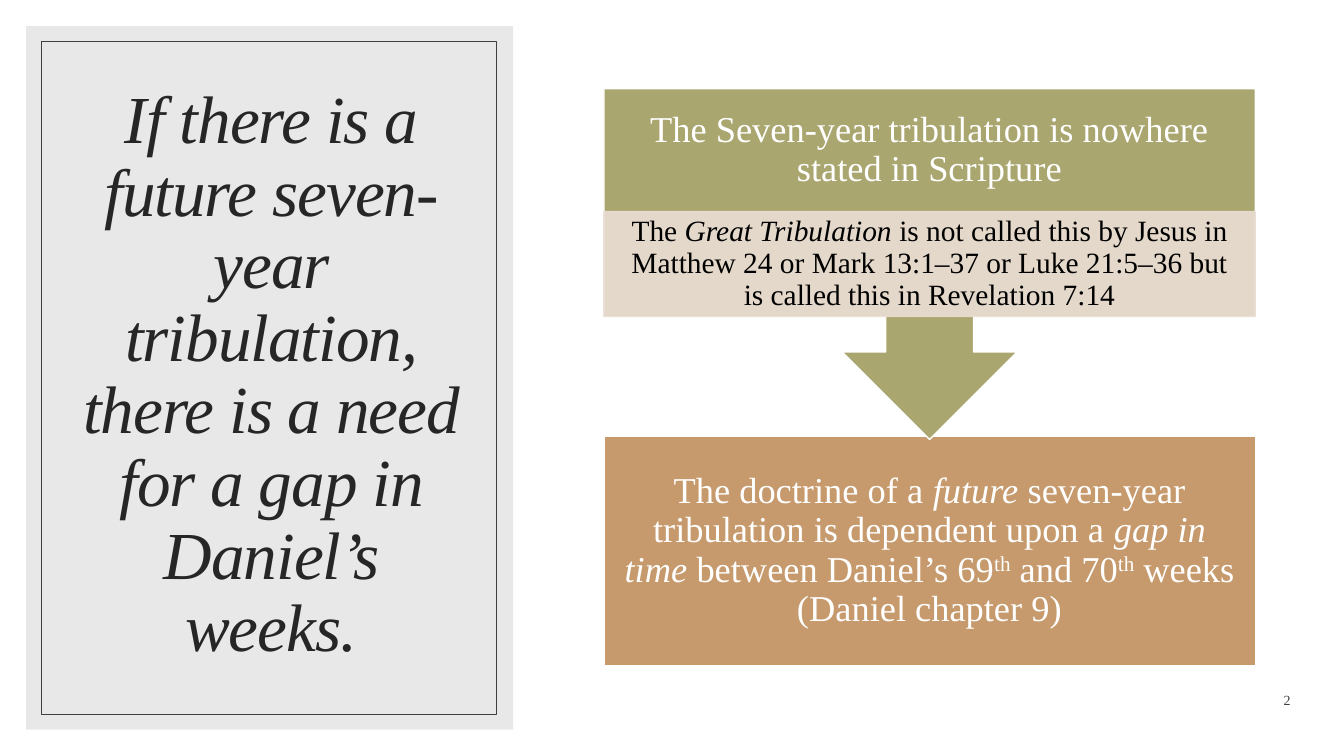
"""Build the slide on the seven-year tribulation and the gap in Daniel's weeks."""
from dataclasses import dataclass
from typing import Optional

from lxml.etree import SubElement
from pptx import Presentation
from pptx.dml.color import RGBColor
from pptx.enum.shapes import MSO_SHAPE as Kind
from pptx.enum.text import MSO_ANCHOR as Anchor, PP_ALIGN as Align
from pptx.oxml.ns import qn
from pptx.util import Inches, Pt

FONT = "Times New Roman"
WHITE, OLIVE, SAND, TAN = "FFFFFF", "AAA670", "EADED4", "C69A6C"
LEFT, WIDE = 5.99, 6.46


@dataclass
class Bit:
    text: str
    slant: bool = False
    lift: bool = False


@dataclass
class Words:
    bits: list[Bit]
    size: float
    color: str
    pad: tuple[float, float] = (0.1, 0.05)
    anchor: Anchor = Anchor.MIDDLE
    align: Align = Align.CENTER
    lead: float = 0.9
    after: float = 0
    track: int = 0


@dataclass
class Item:
    at: tuple[float, float, float, float]
    kind: Optional[Kind] = Kind.RECTANGLE
    fill: Optional[str] = None
    line: Optional[str] = None
    weight: float = 1
    alpha: int = 100
    turn: float = 0
    words: Optional[Words] = None


def tint(code: str) -> RGBColor:
    return RGBColor.from_string(code)


def write(shape, words: Words) -> None:
    frame = shape.text_frame
    frame.word_wrap = True
    frame.vertical_anchor = words.anchor
    side, edge = map(Inches, words.pad)
    frame.margin_left = frame.margin_right = side
    frame.margin_top = frame.margin_bottom = edge
    para = frame.paragraphs[0]
    para.alignment = words.align
    para.line_spacing = words.lead
    para.space_after = Pt(words.after)
    for bit in words.bits:
        run = para.add_run()
        run.text = bit.text
        font = run.font
        font.name, font.size, font.italic = FONT, Pt(words.size), bit.slant
        font.color.rgb = tint(words.color)
        props = run._r.get_or_add_rPr()
        if bit.lift:
            props.set("baseline", "30000")
        if words.track:
            props.set("spc", str(words.track))


def draw(slide, item: Item) -> None:
    box = [Inches(n) for n in item.at]
    if item.kind is None:
        shape = slide.shapes.add_textbox(*box)
    else:
        shape = slide.shapes.add_shape(item.kind, *box)
        shape.shadow.inherit = False
        shape.rotation = item.turn
        if item.fill:
            shape.fill.solid()
            shape.fill.fore_color.rgb = tint(item.fill)
        else:
            shape.fill.background()
        if item.line:
            shape.line.color.rgb = tint(item.line)
            shape.line.width = Pt(item.weight)
        else:
            shape.line.fill.background()
        if item.alpha < 100:
            for node in list(shape.element.spPr.iter(qn("a:srgbClr"))):
                SubElement(node, qn("a:alpha"), val=str(item.alpha * 1000))
    if item.words:
        write(shape, item.words)


TITLE = Words(
    [Bit("If there is a future seven-year tribulation, there is a need "
         "for a gap in Daniel’s weeks.", slant=True)],
    48, "262626", track=-70)
NUMBER = Words([Bit("2")], 10, "404040", anchor=Anchor.BOTTOM,
               align=Align.RIGHT, lead=1, after=6)
CLAIM = Words(
    [Bit("The Seven-year tribulation is nowhere stated in Scripture")],
    26, WHITE, pad=(0.2, 0.2))
DETAIL = Words(
    [Bit("The "), Bit("Great Tribulation", slant=True),
     Bit(" is not called this by Jesus in Matthew 24 or Mark 13:1–37 or "
         "Luke 21:5–36 but is called this in Revelation 7:14")],
    21, "000000", pad=(0.16, 0.03))
RESULT = Words(
    [Bit("The doctrine of a "), Bit("future ", slant=True),
     Bit("seven-year tribulation is dependent upon a "),
     Bit("gap in time", slant=True), Bit(" between Daniel’s 69"),
     Bit("th", lift=True), Bit(" and 70"), Bit("th", lift=True),
     Bit(" weeks (Daniel chapter 9)")],
    26, WHITE, pad=(0.2, 0.2))

ITEMS = [
    Item((0, 0, 13.33, 7.5), fill=WHITE),
    Item((0.26, 0.26, 4.83, 6.98), fill="D9D9D9", alpha=60),
    Item((0.63, 0.61, 4.12, 6.24), kind=None, words=TITLE),
    Item((0.41, 0.41, 4.51, 6.68), line="404040", weight=0.5),
    Item((12, 6.78, 0.9, 0.3), kind=None, words=NUMBER),
    Item((LEFT, 4.33, WIDE, 2.27), fill=TAN, line=WHITE, words=RESULT),
    Item((LEFT, 0.88, WIDE, 3.48), kind=Kind.UP_ARROW_CALLOUT, fill=OLIVE,
         line=WHITE, turn=180),
    Item((LEFT, 0.88, WIDE, 1.22), kind=None, words=CLAIM),
    Item((LEFT, 2.1, WIDE, 1.04), fill=SAND, line=SAND, alpha=90,
         words=DETAIL),
]


def main() -> None:
    deck = Presentation()
    deck.slide_width, deck.slide_height = Inches(13.33), Inches(7.5)
    slide = deck.slides.add_slide(deck.slide_layouts[6])
    for item in ITEMS:
        draw(slide, item)
    deck.save("out.pptx")


if __name__ == "__main__":
    main()
